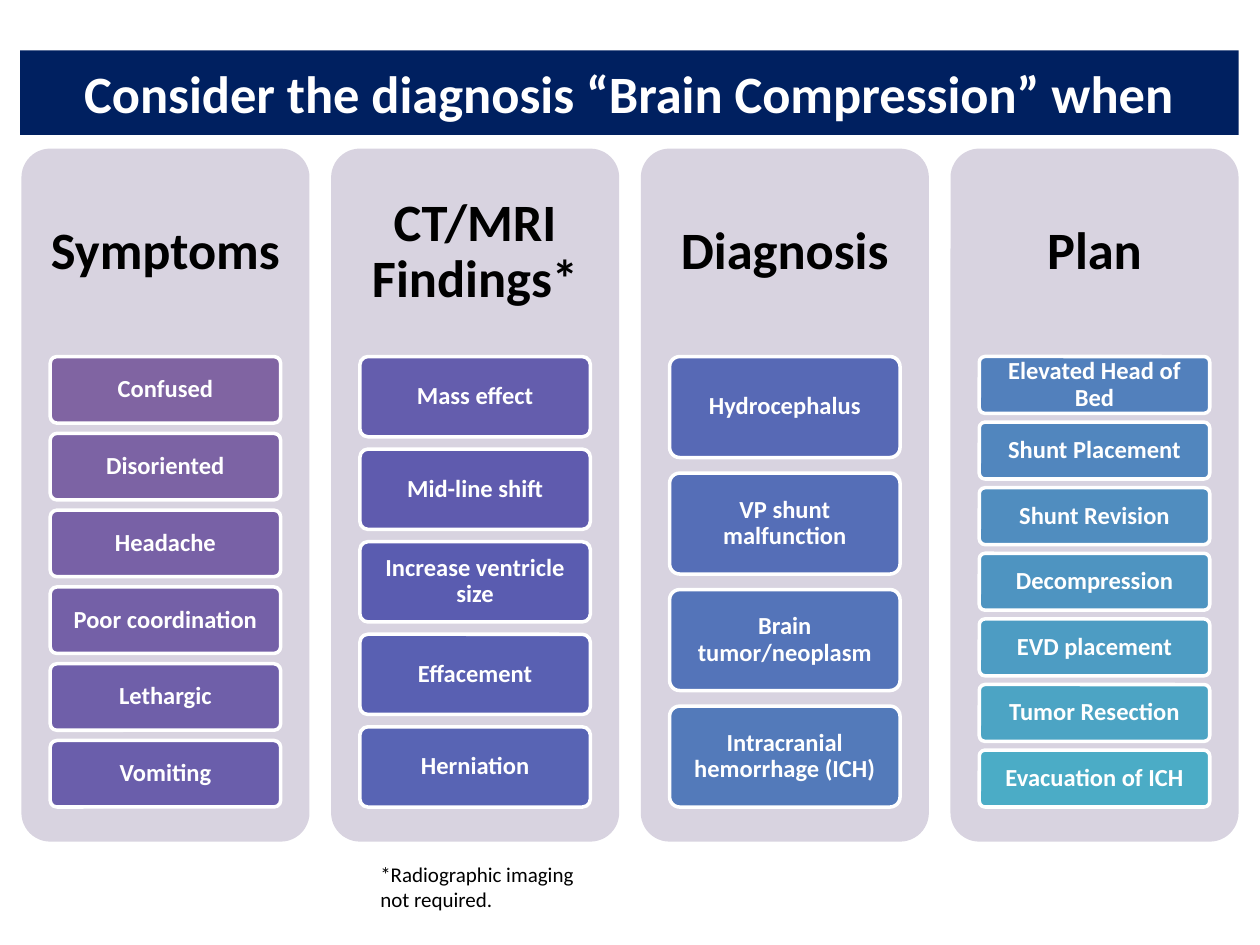
from lxml import etree
from pptx import Presentation
from pptx.dml.color import RGBColor
from pptx.enum.shapes import MSO_SHAPE as Shape
from pptx.enum.text import MSO_ANCHOR as Anchor, MSO_AUTO_SIZE as AutoSize, PP_ALIGN as Align
from pptx.oxml.ns import qn
from pptx.util import Inches, Pt

COLORS = {
    "banner": "002060",
    "panel": "D8D3E0",
    "light": "FFFFFF",
    "dark": "000000",
    "Symptoms": "8064A2 7C63A4 7861A6 7460A7 6F5FA9 6A5EAB",
    "CT/MRI Findings*": "645DAD 5F5BAE 5A5CB0 5960B2 5864B4",
    "Diagnosis": "5769B5 556EB7 5474B9 537ABA",
    "Plan": "5280BC 5186BE 508DBF 4E94C1 4D9CC3 4CA4C4 4BACC6",
}
COLUMNS = {
    "Symptoms": ["Confused", "Disoriented", "Headache", "Poor coordination", "Lethargic", "Vomiting"],
    "CT/MRI Findings*": ["Mass effect", "Mid-line shift", "Increase ventricle size", "Effacement", "Herniation"],
    "Diagnosis": ["Hydrocephalus", "VP shunt malfunction", "Brain tumor/neoplasm", "Intracranial hemorrhage (ICH)"],
    "Plan": ["Elevated Head of Bed", "Shunt Placement", "Shunt Revision", "Decompression",
             "EVD placement", "Tumor Resection", "Evacuation of ICH"],
}
FONT = "Calibri"
COLUMN_GAP = 0.075
ITEM_GAP = 0.154


def place(box):
    return [Inches(length) for length in box]


def split(start, length, count, gap_share):
    size = length / (count + (count - 1) * gap_share)
    return size, [start + index * size * (1 + gap_share) for index in range(count)]


def paint(shape, color):
    shape.fill.solid()
    shape.fill.fore_color.rgb = RGBColor.from_string(COLORS.get(color, color))


def write(shape, text, size, color, bold=True, align=Align.CENTER, spacing=None, margins=(0.1, 0.05)):
    frame = shape.text_frame
    frame.text = text
    frame.word_wrap = True
    frame.auto_size = AutoSize.NONE
    frame.vertical_anchor = Anchor.MIDDLE
    frame.margin_left = frame.margin_right = Inches(margins[0])
    frame.margin_top = frame.margin_bottom = Inches(margins[1])
    paragraph = frame.paragraphs[0]
    paragraph.alignment = align
    paragraph.line_spacing = spacing
    font = paragraph.runs[0].font
    font.name, font.size, font.bold = FONT, Pt(size), bold
    font.color.rgb = RGBColor.from_string(COLORS[color])


def add_rounded(slide, box, color):
    shape = slide.shapes.add_shape(Shape.ROUNDED_RECTANGLE, *place(box))
    shape.adjustments[0] = 0.1
    shape.shadow.inherit = False
    paint(shape, color)
    shape.line.fill.background()
    return shape


def add_banner(slide, box):
    title = slide.shapes.title
    title.left, title.top, title.width, title.height = place(box)
    geometry = etree.SubElement(title.element.spPr, qn("a:prstGeom"), prst="roundRect")
    etree.SubElement(geometry, qn("a:avLst"))
    paint(title, "banner")
    write(title, "Consider the diagnosis “Brain Compression” when", 30, "light")


def add_column(slide, box, heading, items):
    left, top, width, height = box
    add_rounded(slide, box, "panel")
    header = slide.shapes.add_textbox(*place((left, top, width, height * 0.3)))
    write(header, heading, 30, "dark", spacing=0.9, margins=(0.12, 0.12))
    item_height, item_tops = split(top + height * 0.3, height * 0.65, len(items), ITEM_GAP)
    for item, item_top, color in zip(items, item_tops, COLORS[heading].split()):
        shape = add_rounded(slide, (left + width * 0.1, item_top, width * 0.8, item_height), color)
        shape.line.color.rgb = RGBColor.from_string(COLORS["light"])
        shape.line.width = Pt(2)
        write(shape, item, 14, "light", spacing=0.9, margins=(0.04, 0.03))


def add_columns(slide, box):
    left, top, width, height = box
    column_width, column_lefts = split(left, width, len(COLUMNS), COLUMN_GAP)
    for column_left, (heading, items) in zip(column_lefts, COLUMNS.items()):
        add_column(slide, (column_left, top, column_width, height), heading, items)


def add_footnote(slide, box):
    note = slide.shapes.add_textbox(*place(box))
    write(note, "*Radiographic imaging not required.", 12, "dark", bold=False, align=Align.LEFT)


def main():
    presentation = Presentation()
    width, height = 10, 7.5
    presentation.slide_width, presentation.slide_height = Inches(width), Inches(height)
    slide = presentation.slides.add_slide(presentation.slide_layouts[5])
    margin = width * 0.017
    content_width = width - 2 * margin
    add_columns(slide, (margin, 1.18, content_width, 5.5))
    add_footnote(slide, (2.92, 6.79, 1.75, 0.5))
    add_banner(slide, (margin - 0.01, 0.4, content_width + 0.01, 0.67))
    presentation.save("out.pptx")


if __name__ == "__main__":
    main()
